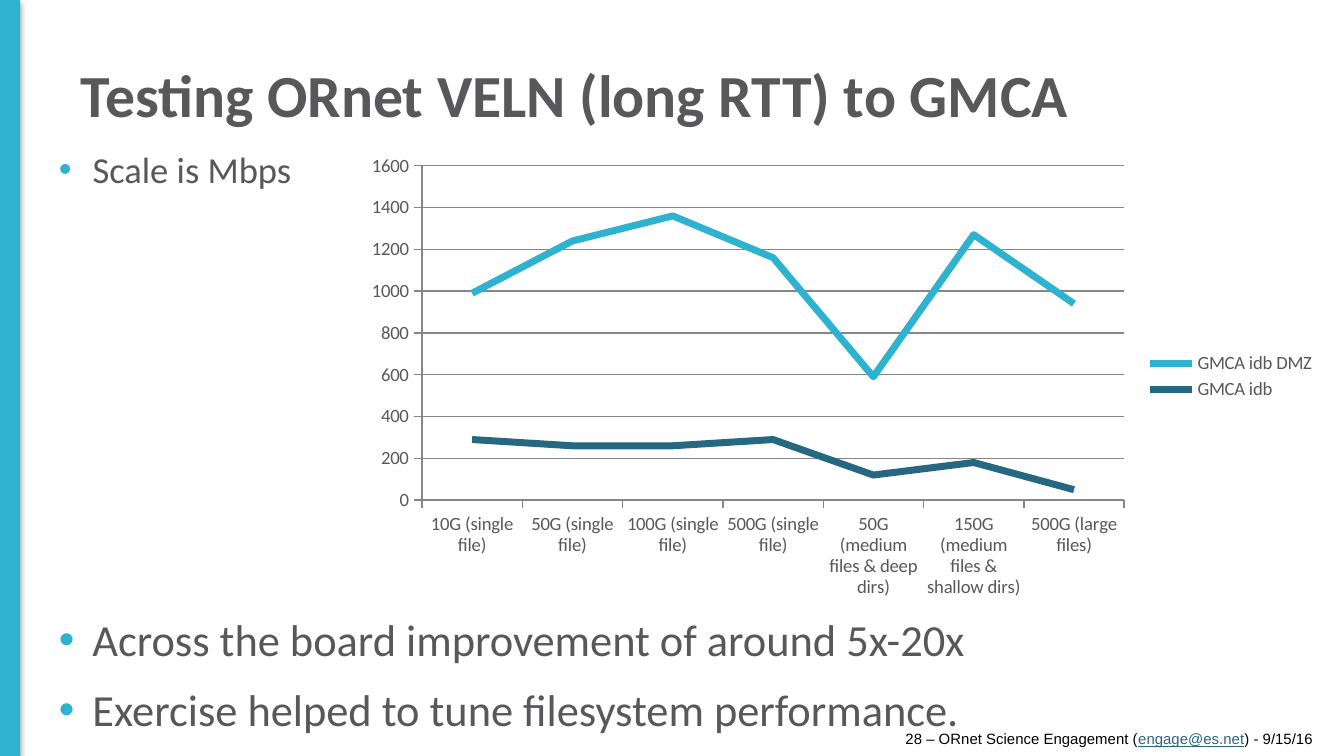
from lxml import etree
from pptx import Presentation
from pptx.chart.data import CategoryChartData
from pptx.dml.color import RGBColor
from pptx.enum.chart import XL_CHART_TYPE, XL_LEGEND_POSITION, XL_MARKER_STYLE, XL_TICK_MARK
from pptx.enum.shapes import MSO_SHAPE
from pptx.enum.text import MSO_ANCHOR, PP_ALIGN
from pptx.oxml import parse_xml
from pptx.oxml.ns import nsdecls, qn
from pptx.util import Pt

LINE = XL_CHART_TYPE.LINE
RIGHT = XL_LEGEND_POSITION.RIGHT
NONE = XL_MARKER_STYLE.NONE
OUT = XL_TICK_MARK.OUTSIDE
RECT = MSO_SHAPE.RECTANGLE
MIDDLE = MSO_ANCHOR.MIDDLE
LEFT = PP_ALIGN.LEFT

CYAN, NAVY, GRAY, BLACK, RULE = "2DB2CF", "266782", "58585B", "000000", "868686"

CATS = [
    "10G (single file)", "50G (single file)", "100G (single file)",
    "500G (single file)", "50G (medium files & deep dirs)",
    "150G (medium files & shallow dirs)", "500G (large files)",
]
RATES = [
    ("GMCA idb DMZ", CYAN, [990, 1240, 1360, 1160, 590, 1270, 940]),
    ("GMCA idb", NAVY, [290, 260, 260, 290, 120, 180, 50]),
]


def color(code):
    return RGBColor.from_string(code)


def style(font, size, code, name="Calibri", bold=False):
    font.name, font.size, font.bold = name, Pt(size), bold
    font.color.rgb = color(code)


def points(box):
    return [Pt(n) for n in box]


def add_bar(slide, box):
    bar = slide.shapes.add_shape(RECT, *points(box))
    bar.fill.solid()
    bar.fill.fore_color.rgb = color(CYAN)
    bar.line.fill.background()
    bar._element.spPr.append(parse_xml(
        f'<a:effectLst {nsdecls("a")}><a:outerShdw blurRad="{Pt(3.1)}" '
        f'dist="{Pt(1.8)}" dir="5400000" rotWithShape="0"><a:srgbClr val="{BLACK}">'
        '<a:alpha val="35000"/></a:srgbClr></a:outerShdw></a:effectLst>'))


def add_title(slide, box, text):
    title = slide.shapes.title
    title.left, title.top, title.width, title.height = points(box)
    frame = title.text_frame
    frame.vertical_anchor = MIDDLE
    para = frame.paragraphs[0]
    para.alignment = LEFT
    run = para.add_run()
    run.text = text
    style(run.font, 32, GRAY, bold=True)


def add_list(slide, box, size, items):
    frame = slide.shapes.add_textbox(*points(box)).text_frame
    frame.word_wrap = True
    for i, text in enumerate(items):
        para = frame.add_paragraph() if i else frame.paragraphs[0]
        props = para._p.get_or_add_pPr()
        props.set("marL", str(Pt(18)))
        props.set("indent", str(Pt(-18)))
        tint = etree.SubElement(props, qn("a:buClr"))
        etree.SubElement(tint, qn("a:srgbClr"), val=CYAN)
        etree.SubElement(props, qn("a:buFont"), typeface="Arial")
        etree.SubElement(props, qn("a:buChar"), char="•")
        if i:
            para.space_before = Pt(8.8)
        run = para.add_run()
        run.text = text
        style(run.font, size, GRAY)


def place_plot(chart, **parts):
    """Fix the inner plot area, in fractions of the chart."""
    plot = chart._chartSpace.chart.plotArea
    for old in plot.findall(qn("c:layout")):
        plot.remove(old)
    sizes = "".join(f'<c:{key} val="{val}"/>' for key, val in parts.items())
    plot.insert(0, parse_xml(
        f'<c:layout {nsdecls("c")}><c:manualLayout><c:layoutTarget val="inner"/>'
        f'<c:xMode val="edge"/><c:yMode val="edge"/>{sizes}'
        '</c:manualLayout></c:layout>'))


def add_rates(slide, box):
    data = CategoryChartData()
    data.categories = CATS
    for name, _, vals in RATES:
        data.add_series(name, vals)
    chart = slide.shapes.add_chart(LINE, *points(box), data).chart
    style(chart.font, 10, GRAY)
    chart.has_title = False
    chart.has_legend = True
    chart.legend.position = RIGHT
    chart.legend.include_in_layout = False
    plot = chart.plots[0]
    plot.vary_by_categories = False
    for line, (_, code, _) in zip(plot.series, RATES):
        line.smooth = False
        line.marker.style = NONE
        line.format.line.width = Pt(3.75)
        line.format.line.color.rgb = color(code)
    axis = chart.value_axis
    axis.minimum_scale, axis.maximum_scale, axis.major_unit = 0, 1600, 200
    axis.has_major_gridlines = True
    for part in (axis, chart.category_axis):
        part.major_tick_mark = OUT
    for part in (axis, chart.category_axis, axis.major_gridlines):
        part.format.line.width = Pt(0.75)
        part.format.line.color.rgb = color(RULE)
    place_plot(chart, x=0.07, y=0.04, w=0.72, h=0.73)


def add_footer(slide, box, parts):
    frame = slide.shapes.add_textbox(*points(box)).text_frame
    frame.word_wrap = True
    frame.vertical_anchor = MIDDLE
    frame.margin_top = frame.margin_bottom = 0
    for text, code, under in parts:
        run = frame.paragraphs[0].add_run()
        run.text = text
        style(run.font, 8, code, "Arial")
        run.font.underline = under


def add_results(deck):
    slide = deck.slides.add_slide(deck.slide_layouts[5])
    add_bar(slide, (0, 0, 10.8, 405))
    add_title(slide, (36, 16.5, 648, 67.5), "Testing ORnet VELN (long RTT) to GMCA")
    add_list(slide, (24.5, 75, 687.5, 26.5), 19.6, ["Scale is Mbps"])
    add_list(slide, (24.5, 324.5, 670.5, 65.5), 23.8, [
        "Across the board improvement of around 5x-20x",
        "Exercise helped to tune filesystem performance.",
    ])
    add_rates(slide, (189.5, 79, 522.5, 245.5))
    add_footer(slide, (478, 390.5, 235, 10.5), [
        ("28 – ORnet Science Engagement (", BLACK, False),
        ("engage@es.net", NAVY, True),
        (") - 9/15/16", BLACK, False),
    ])


def main():
    deck = Presentation()
    deck.slide_width, deck.slide_height = Pt(720), Pt(405)
    add_results(deck)
    deck.save("out.pptx")


if __name__ == "__main__":
    main()
